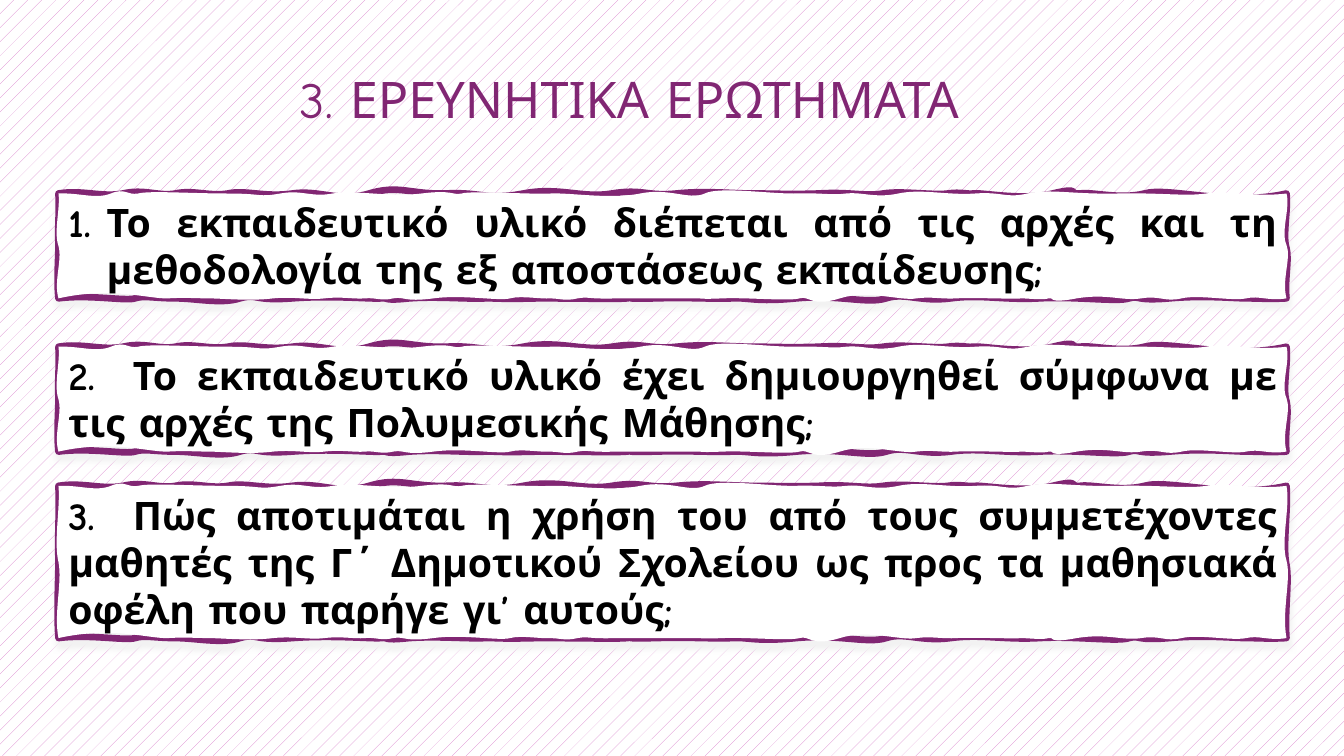
from dataclasses import dataclass
from typing import NamedTuple

from lxml import etree
from pptx import Presentation
from pptx import util as u
from pptx.dml.color import RGBColor
from pptx.enum import dml, text
from pptx.oxml.ns import qn

PX = 9144  # one hundredth of an inch
FONT = "Comic Neue"
PLUM = RGBColor(0x81, 0x26, 0x73)
PINK = RGBColor(0xD8, 0x7A, 0xCA)
WHITE = RGBColor(0xFF, 0xFF, 0xFF)
BLACK = RGBColor(0x00, 0x00, 0x00)
SHADE = RGBColor(0xF2, 0xF2, 0xF2)

LEFT, WIDTH = 58, 1218
SIDE = 104  # height for which the side waves are given
NUMBER_INDENT, NUMBER_TAB = 38, 64

Wave = tuple[int, int, int, int, int]


class Outline(NamedTuple):
    """Hand-drawn edges, clockwise: two control points and the end of each wave.

    Top and bottom give x on the slide and dy from the edge; the sides give dx
    from the edge and y within SIDE.
    """
    top: list[Wave]
    right: list[Wave]
    bottom: list[Wave]
    left: list[Wave]


@dataclass(frozen=True)
class Question:
    top: int
    height: int
    wording: str
    auto_number: bool = False


STROKE = Outline(
    top=[(82, -4, 101, 4, 122), (143, -5, 157, 3, 174), (191, -4, 208, 3, 226),
         (243, -4, 263, 4, 290), (317, -4, 336, 9, 366), (396, -9, 407, 1, 442),
         (477, -2, 482, 7, 519), (555, -7, 577, 5, 607), (637, -5, 642, 3, 671),
         (700, -3, 723, 0, 747), (772, 0, 780, 1, 812), (843, -2, 857, 3, 876),
         (894, -3, 926, 2, 940), (953, -2, 960, 1, 967), (975, -1, 1014, 7, 1044),
         (1073, -7, 1059, 1, 1071), (1083, -2, 1111, 6, 1135), (1159, -7, 1219, 13, 1276)],
    right=[(2, 14, -4, 42, 54), (3, 66, -2, 85, 104)],
    bottom=[(1259, 1, 1248, 0, 1236), (1224, 0, 1194, -3, 1160), (1125, 3, 1131, -3, 1120),
            (1109, 4, 1067, -2, 1031), (996, 2, 972, -4, 943), (913, 4, 897, -6, 879),
            (860, 6, 832, -4, 790), (749, 4, 742, -1, 726), (711, 1, 686, -1, 650),
            (614, 1, 631, -1, 622), (614, 1, 575, 0, 534), (493, 1, 500, 0, 482),
            (464, 1, 434, -2, 406), (378, 3, 386, -1, 378), (371, 1, 330, -3, 290),
            (250, 3, 256, -5, 238), (220, 6, 194, 0, 174), (153, 0, 143, -3, 134),
            (125, 3, 89, -4, 58)],
    left=[(-2, 86, 0, 65, 50), (-1, 35, 1, 21, 0)],
)
PAPER = Outline(
    top=[(79, -1, 95, 6, 110), (124, -6, 126, 2, 137), (148, -3, 190, 0, 226),
         (262, 0, 255, 4, 278), (300, -4, 308, 4, 330), (351, -4, 386, 4, 418),
         (450, -4, 448, 2, 458), (467, -3, 526, 1, 546), (566, -1, 605, 6, 635),
         (664, -6, 684, 7, 699), (713, -7, 760, 0, 787), (815, -1, 824, 2, 839),
         (854, -2, 868, 5, 891), (914, -5, 940, 2, 967), (995, -2, 997, 5, 1019),
         (1041, -5, 1064, 1, 1108), (1151, -1, 1176, 3, 1196), (1217, -4, 1244, 4, 1276)],
    right=[(4, 14, -6, 38, 51), (5, 64, -5, 85, 104)],
    bottom=[(1258, 3, 1249, -3, 1236), (1222, 3, 1189, -4, 1172), (1155, 4, 1151, -3, 1132),
            (1113, 3, 1099, -5, 1068), (1037, 6, 1046, -2, 1040), (1035, 2, 1019, 0, 1013),
            (1007, 1, 964, -1, 949), (934, 1, 924, -2, 909), (894, 3, 861, -9, 833),
            (804, 9, 803, -3, 793), (783, 3, 741, -1, 717), (693, 1, 700, 0, 689),
            (678, 0, 644, 0, 613), (581, 1, 585, -2, 573), (561, 3, 554, 0, 546),
            (537, 1, 517, -3, 506), (495, 3, 459, -4, 430), (400, 4, 402, -2, 390),
            (378, 3, 373, -1, 362), (351, 1, 339, -2, 322), (306, 2, 293, -2, 271),
            (248, 3, 220, 0, 206), (193, 0, 184, -1, 167), (149, 1, 111, -12, 58)],
    left=[(-5, 87, 4, 66, 52), (-5, 38, 2, 15, 0)],
)

QUESTIONS = [
    Question(344, 104, "2.\tΤο εκπαιδευτικό υλικό έχει δημιουργηθεί σύμφωνα με "
                       "τις αρχές της Πολυμεσικής Μάθησης;"),
    Question(482, 151, "3.\tΠώς αποτιμάται η χρήση του από τους συμμετέχοντες "
                       "μαθητές της Γ΄ Δημοτικού Σχολείου ως προς τα μαθησιακά "
                       "οφέλη που παρήγε γι’ αυτούς;"),
    Question(192, 104, "Το εκπαιδευτικό υλικό διέπεται από τις αρχές και τη "
                       "μεθοδολογία της εξ αποστάσεως εκπαίδευσης;", auto_number=True),
]


def px(length: float) -> u.Emu:
    return u.Emu(round(length * PX))


def add_node(parent, tag: str, **attributes):
    return etree.SubElement(parent, qn(tag), {k: str(v) for k, v in attributes.items()})


def outline_curves(outline: Outline, height: int) -> list[list[tuple[float, float]]]:
    """Bezier point triples, measured from the panel's top left corner."""
    def level(waves: list[Wave], y: int):
        return [[(a - LEFT, y + b), (c - LEFT, y + d), (end - LEFT, y)]
                for a, b, c, d, end in waves]

    def upright(waves: list[Wave], x: int):
        k = height / SIDE
        return [[(x + a, b * k), (x + c, d * k), (x, end * k)]
                for a, b, c, d, end in waves]

    return (level(outline.top, 0) + upright(outline.right, WIDTH)
            + level(outline.bottom, height) + upright(outline.left, 0))


def add_contour(contours, outline: Outline, height: int, **paint: str) -> None:
    contour = add_node(contours, "a:path", w=px(WIDTH), h=px(height), **paint)
    add_node(add_node(contour, "a:moveTo"), "a:pt", x=0, y=0)
    for curve in outline_curves(outline, height):
        bezier = add_node(contour, "a:cubicBezTo")
        for x, y in curve:
            add_node(bezier, "a:pt", x=px(x), y=px(y))
    add_node(contour, "a:close")


def add_panel(slide, question: Question):
    """Sheet whose uneven paper partly covers its uneven border."""
    right, bottom = LEFT + WIDTH, question.top + question.height
    builder = slide.shapes.build_freeform(LEFT, question.top, scale=PX)
    builder.add_line_segments([(right, question.top), (right, bottom), (LEFT, bottom)])
    panel = builder.convert_to_shape()
    panel.fill.solid()
    panel.fill.fore_color.rgb = WHITE
    panel.line.color.rgb = PLUM
    panel.line.width = u.Pt(4.75)
    panel.shadow.inherit = False

    properties = panel.element.spPr
    contours = properties.find(".//" + qn("a:pathLst"))
    for straight in list(contours):
        contours.remove(straight)
    add_contour(contours, STROKE, question.height, fill="none")
    add_contour(contours, PAPER, question.height, stroke="0")
    shadow = add_node(properties.find(qn("a:effectLst")), "a:outerShdw",
                      blurRad=u.Pt(4), dist=u.Pt(4), dir=5400000, algn="t", rotWithShape=0)
    add_node(shadow, "a:srgbClr", val=SHADE)
    return panel


def add_question(slide, question: Question) -> None:
    frame = add_panel(slide, question).text_frame
    frame.word_wrap = True
    frame.auto_size = text.MSO_AUTO_SIZE.SHAPE_TO_FIT_TEXT
    frame.vertical_anchor = text.MSO_ANCHOR.TOP
    sentence = frame.paragraphs[0]
    sentence.alignment = text.PP_ALIGN.JUSTIFY
    layout = sentence._p.get_or_add_pPr()
    if question.auto_number:
        layout.set("marL", str(px(NUMBER_INDENT)))
        layout.set("indent", str(-px(NUMBER_INDENT)))
        add_node(layout, "a:buFont", typeface="+mj-lt")
        add_node(layout, "a:buAutoNum", type="arabicPeriod")
    else:
        sentence.space_after = u.Pt(8)
        add_node(add_node(layout, "a:tabLst"), "a:tab", pos=px(NUMBER_TAB), algn="l")
    add_run(sentence, question.wording, 28, BLACK, bold=True)


def add_run(paragraph, wording: str, size: int, color: RGBColor, bold: bool = False) -> None:
    run = paragraph.add_run()
    run.text = wording
    run.font.name = FONT
    run.font.size = u.Pt(size)
    run.font.bold = bold
    run.font.color.rgb = color


def add_heading(slide, wording: str) -> None:
    heading = slide.shapes.title
    heading.left, heading.top, heading.width, heading.height = map(px, (130, 59, 989, 85))
    heading.text_frame.vertical_anchor = text.MSO_ANCHOR.MIDDLE
    line = heading.text_frame.paragraphs[0]
    line.alignment = text.PP_ALIGN.CENTER
    line.line_spacing = 0.9
    add_run(line, wording, 36, PLUM)


def main() -> None:
    deck = Presentation()
    deck.slide_width, deck.slide_height = px(1333), px(750)
    slide = deck.slides.add_slide(deck.slide_layouts[5])
    backdrop = slide.background.fill
    backdrop.patterned()
    backdrop.pattern = dml.MSO_PATTERN.PERCENT_5
    backdrop.fore_color.rgb = PINK
    backdrop.back_color.rgb = WHITE
    add_heading(slide, "3. ΕΡΕΥΝΗΤΙΚΑ ΕΡΩΤΗΜΑΤΑ")
    for question in QUESTIONS:
        add_question(slide, question)
    deck.save("out.pptx")


if __name__ == "__main__":
    main()
